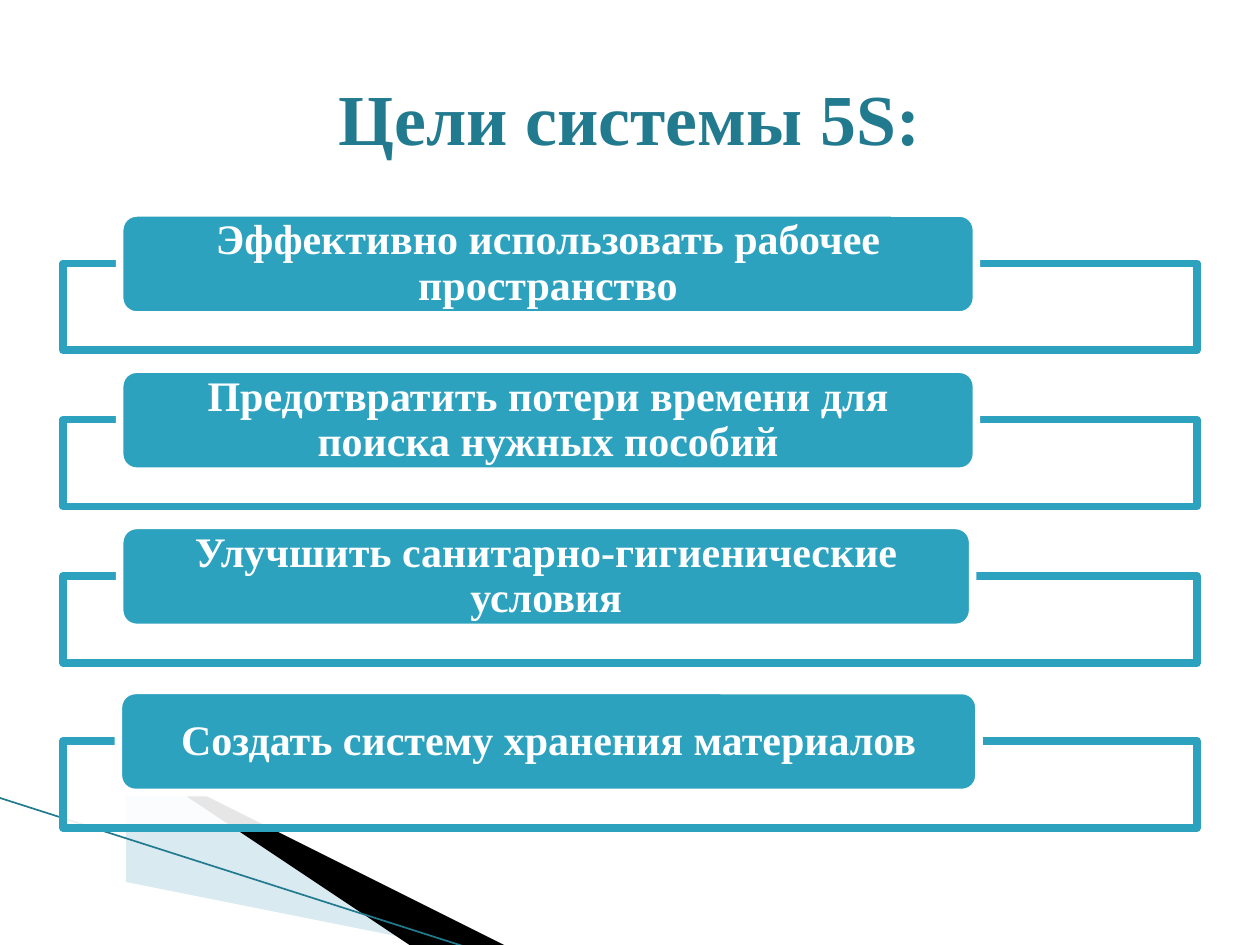
from lxml import etree
from pptx import Presentation, util as u
from pptx.dml.color import RGBColor
from pptx.enum import shapes, text
from pptx.oxml.ns import qn

TEAL, DARK_TEAL, PALE, WHITE, BLACK = "2DA2BF", "227A8F", "A0CBDC", "FFFFFF", "000000"
FONT = "Times New Roman"
MARGIN, FRAME_W, FRAME_H = 0.5, 9, 0.69
LABEL_H, LABEL_RISE = 0.81, 0.4

# Goal text, frame top, label left, label width
GOALS = [
    ("Эффективно использовать рабочее пространство", 2.09, 0.95, 6.8),
    ("Предотвратить потери времени для поиска нужных пособий", 3.33, 0.95, 6.8),
    ("Улучшить санитарно-гигиенические условия", 4.57, 0.95, 6.77),
    ("Создать систему хранения материалов", 5.88, 0.94, 6.83),
]


def color(hex_value):
    return RGBColor.from_string(hex_value)


def apply(target, formats):
    for name, value in formats.items():
        setattr(target, name, value)


def paint(shape, fill, line=None, opacity=100):
    shape.shadow.inherit = False
    shape.fill.solid()
    shape.fill.fore_color.rgb = color(fill)
    if opacity < 100:
        solid = shape.fill._xPr.find(qn("a:solidFill"))
        etree.SubElement(solid[0], qn("a:alpha"), val=str(opacity * 1000))
    if line:
        shape.line.color.rgb = color(line)
        shape.line.width = u.Pt(4.33)
    else:
        shape.line.fill.background()


def write(frame, words, size, hex_value):
    apply(frame, {"word_wrap": True, "vertical_anchor": text.MSO_ANCHOR.MIDDLE})
    frame.text = words
    paragraph = frame.paragraphs[0]
    paragraph.alignment = text.PP_ALIGN.CENTER
    font = paragraph.runs[0].font
    apply(font, {"name": FONT, "size": u.Pt(size), "bold": True})
    font.color.rgb = color(hex_value)
    return paragraph


def add_box(slide, preset, left, top, width, height):
    return slide.shapes.add_shape(preset, *map(u.Inches, (left, top, width, height)))


def add_wedge(slide, points, fill, opacity=100):
    builder = slide.shapes.build_freeform(*points[0], scale=u.Inches(1))
    builder.add_line_segments(points[1:], close=True)
    paint(builder.convert_to_shape(), fill, opacity=opacity)


def add_corner_decoration(slide):
    add_wedge(slide, [(0.55, 6.51), (5.95, 7.51), (4.56, 7.51), (0.55, 6.5)], PALE, 40)
    add_wedge(slide, [(0.53, 6.49), (4.57, 7.51), (3.72, 7.52), (0.54, 6.5)], BLACK)
    edge = slide.shapes.add_connector(
        shapes.MSO_CONNECTOR.STRAIGHT, *map(u.Inches, (-0.01, 6.33, 3.71, 7.52)))
    edge.line.color.rgb = color(DARK_TEAL)
    edge.line.width = u.Pt(0.95)
    etree.SubElement(edge._element.spPr, qn("a:effectLst"))


def add_goal(slide, words, top, label_left, label_width):
    frame = add_box(slide, shapes.MSO_SHAPE.RECTANGLE, MARGIN, top, FRAME_W, FRAME_H)
    paint(frame, WHITE, TEAL, opacity=90)
    label = add_box(slide, shapes.MSO_SHAPE.ROUNDED_RECTANGLE,
                    label_left, top - LABEL_RISE, label_width, LABEL_H)
    paint(label, TEAL, WHITE)
    apply(label.text_frame, {"margin_left": u.Inches(0.24), "margin_right": u.Inches(0.24),
                             "margin_top": 0, "margin_bottom": 0})
    write(label.text_frame, words, 24, WHITE).line_spacing = 0.9


def add_title(slide, words):
    title = slide.shapes.title
    apply(title, {"left": u.Inches(MARGIN), "top": u.Inches(0.3),
                  "width": u.Inches(FRAME_W), "height": u.Inches(1.25)})
    write(title.text_frame, words, 41, DARK_TEAL)


def main():
    deck = Presentation()
    apply(deck, {"slide_width": u.Inches(10), "slide_height": u.Inches(7.5)})
    slide = deck.slides.add_slide(deck.slide_layouts[5])
    add_corner_decoration(slide)
    for goal in GOALS:
        add_goal(slide, *goal)
    add_title(slide, "Цели системы 5S:")
    deck.save("out.pptx")


if __name__ == "__main__":
    main()
